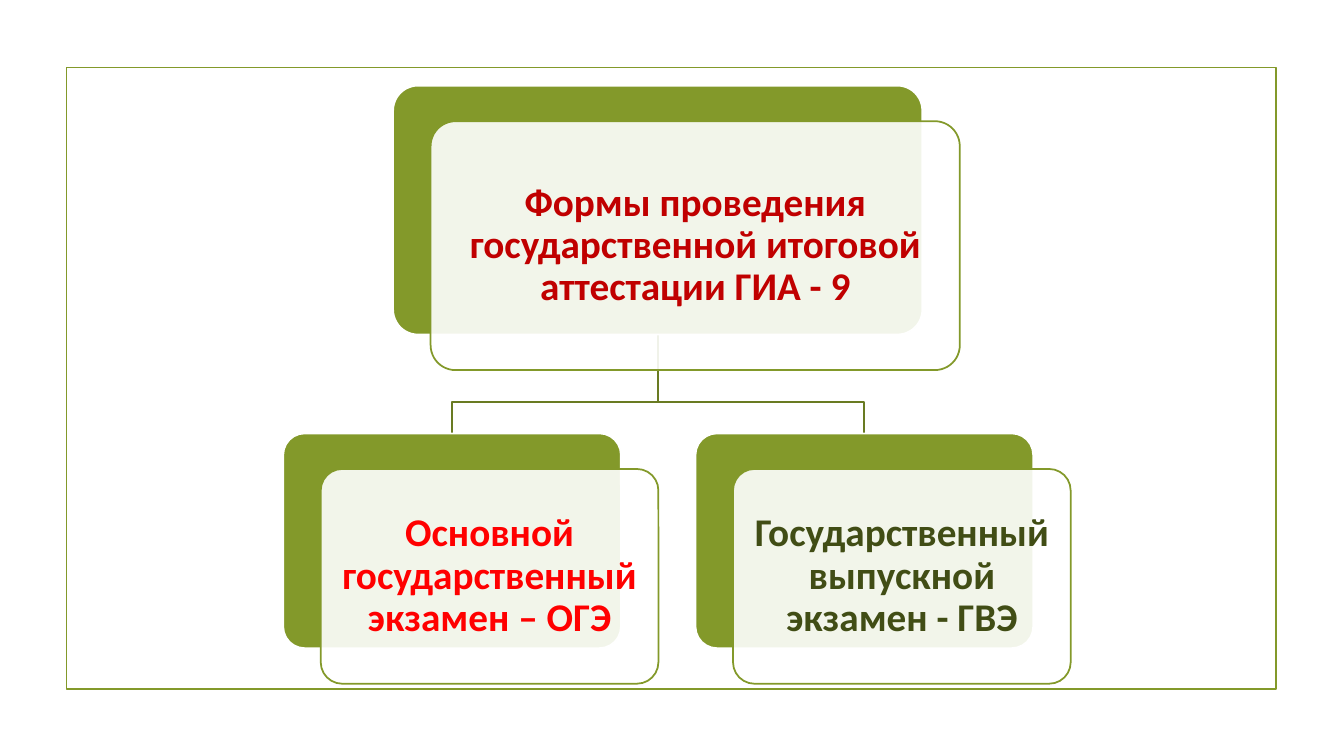
from dataclasses import dataclass

from pptx import Presentation
from pptx import util as u
from pptx.dml import color
from pptx.enum import shapes, text
from pptx.oxml import xmlchemy
from lxml import etree


@dataclass(frozen=True)
class Theme:
    green: str = "83992A"
    link: str = "697B22"
    white: str = "FFFFFF"
    heading: str = "C00000"
    main_exam: str = "FF0000"
    final_exam: str = "414D15"
    font: str = "Calibri"
    size: float = 28
    line: float = 1.25


theme = Theme()
rgb = color.RGBColor.from_string
Pt = u.Pt

deck = Presentation()
deck.slide_width, deck.slide_height = Pt(960), Pt(540)
page = deck.slides.add_slide(deck.slide_layouts[5])


def add_panel(kind, left, top, width, height, line, fill=None):
    panel = page.shapes.add_shape(kind, Pt(left), Pt(top), Pt(width), Pt(height))
    panel.shadow.inherit = False
    panel.line.color.rgb = rgb(line)
    panel.line.width = Pt(theme.line)
    if fill:
        panel.adjustments[0] = 0.1
        panel.fill.solid()
        panel.fill.fore_color.rgb = rgb(fill)
    else:
        panel.fill.background()
    return panel


def write_label(box, wording, ink):
    frame = box.text_frame
    frame.text = wording
    frame.word_wrap = True
    frame.auto_size = text.MSO_AUTO_SIZE.NONE
    frame.vertical_anchor = text.MSO_ANCHOR.MIDDLE
    frame.margin_left = frame.margin_right = Pt(8.4)
    frame.margin_top = frame.margin_bottom = Pt(8.4)
    para = frame.paragraphs[0]
    para.alignment = text.PP_ALIGN.CENTER
    para.line_spacing = 0.9
    span = para.runs[0]
    span.font.name = theme.font
    span.font.size = Pt(theme.size)
    span.font.bold = True
    span.font.color.rgb = rgb(ink)


add_panel(shapes.MSO_SHAPE.RECTANGLE, 47.5, 48.2, 864, 444.2, theme.green)

root = (280.8, 61.2, 378, 177.8)
branch_top, branch_width, branch_height = 309.6, 241.2, 153.4
branch_lefts = (202.3, 496.8)
root_center = root[0] + root[2] / 2
root_bottom = root[1] + root[3]
bend = 287.3

for left in reversed(branch_lefts):
    center = left + branch_width / 2
    route = page.shapes.build_freeform(Pt(root_center), Pt(root_bottom))
    route.add_line_segments(
        [(Pt(root_center), Pt(bend)), (Pt(center), Pt(bend)), (Pt(center), Pt(branch_top))],
        close=False,
    )
    link = route.convert_to_shape()
    link.shadow.inherit = False
    link.fill.background()
    link.line.color.rgb = rgb(theme.link)
    link.line.width = Pt(theme.line)

main_branch, final_branch = [
    (left, branch_top, branch_width, branch_height) for left in branch_lefts
]
cards = [
    (root, None, theme.heading),
    (main_branch, "Основной государственный экзамен – ОГЭ", theme.main_exam),
    (final_branch, "Государственный выпускной экзамен - ГВЭ", theme.final_exam),
]
shift_x, shift_y = 26.8, 25.4
for (left, top, width, height), wording, ink in cards:
    rounded = shapes.MSO_SHAPE.ROUNDED_RECTANGLE
    add_panel(rounded, left, top, width, height, theme.white, theme.green)
    front = add_panel(
        rounded, left + shift_x, top + shift_y, width, height, theme.green, theme.white
    )
    tint = front.fill._xPr.find(".//" + xmlchemy.qn("a:srgbClr"))
    etree.SubElement(tint, xmlchemy.qn("a:alpha"), val="90000")
    if wording:
        write_label(front, wording, ink)

title = page.shapes.title
inset = 5.1
title.left, title.top = Pt(root[0] + shift_x + inset), Pt(root[1] + shift_y + inset)
title.width, title.height = Pt(root[2] - 2 * inset), Pt(root[3] - 2 * inset)
write_label(title, "Формы проведения государственной итоговой аттестации ГИА - 9", theme.heading)
title.element.getparent().append(title.element)

deck.save("out.pptx")
